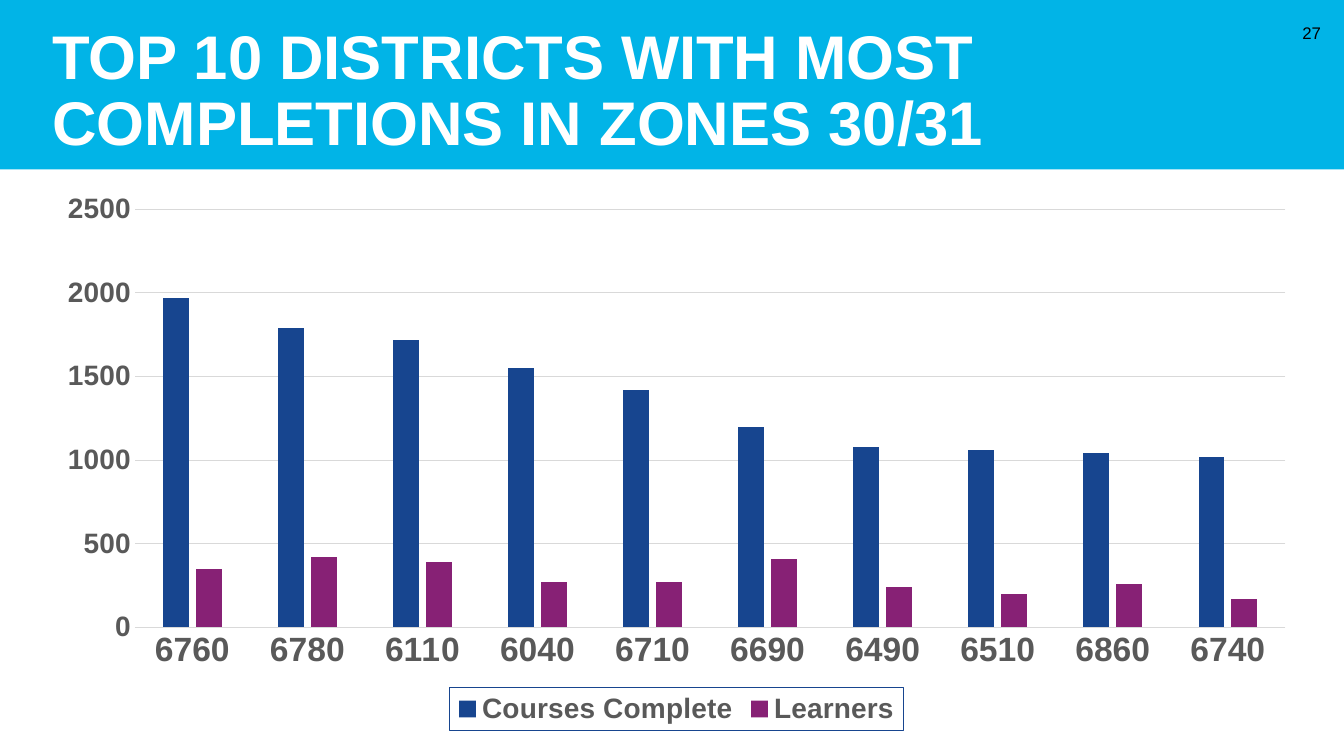
from lxml.etree import fromstring
from pptx import Presentation
from pptx.chart.data import CategoryChartData
from pptx.dml.color import RGBColor
from pptx.enum.chart import XL_CHART_TYPE as ChartType, XL_LEGEND_POSITION as LegendPos
from pptx.enum.chart import XL_TICK_MARK as Tick
from pptx.enum.shapes import MSO_SHAPE as Shape
from pptx.enum.text import MSO_ANCHOR as Anchor, PP_ALIGN as Align
from pptx.util import Inches, Pt

COLORS = {"band": "01B4E7", "white": "FFFFFF", "black": "000000", "label": "595959",
          "grid": "D9D9D9", "courses": "17458F", "learners": "872175"}
FONT = "Arial"
DISTRICTS = ["6760", "6780", "6110", "6040", "6710", "6690", "6490", "6510", "6860", "6740"]
SERIES = [
    ("Courses Complete", "courses", [1970, 1790, 1720, 1550, 1420, 1200, 1080, 1060, 1040, 1020]),
    ("Learners", "learners", [350, 420, 390, 270, 270, 410, 240, 200, 260, 170]),
]
LEGEND_BORDER = (
    '<c:spPr xmlns:c="http://schemas.openxmlformats.org/drawingml/2006/chart" '
    'xmlns:a="http://schemas.openxmlformats.org/drawingml/2006/main"><a:noFill/>'
    '<a:ln w="9525"><a:solidFill><a:srgbClr val="{}"/></a:solidFill></a:ln></c:spPr>')


def rgb(name):
    """Return the named colour."""
    return RGBColor.from_string(COLORS[name])


def set_font(font, size, color, bold=False):
    """Style a font of a run, axis or legend."""
    font.name, font.size, font.bold = FONT, Pt(size), bold
    font.color.rgb = rgb(color)


def set_line(line, color):
    """Give a line the thin chart weight and a colour."""
    line.width = Pt(0.75)
    line.color.rgb = rgb(color)


def add_band(s, width, height):
    """Draw the title band across the top."""
    sp = s.shapes.add_shape(Shape.RECTANGLE, 0, 0, width, height)
    sp.shadow.inherit = False
    sp.fill.solid()
    sp.fill.fore_color.rgb = rgb("band")
    sp.line.fill.background()


def add_text(s, box, text, size, color, bold=False, align=Align.LEFT,
             anchor=Anchor.MIDDLE, spacing=1.0, top=0.05, bottom=0.05):
    """Add a wrapped text box with one run."""
    tf = s.shapes.add_textbox(*map(Inches, box)).text_frame
    tf.word_wrap = True
    tf.vertical_anchor = anchor
    tf.margin_top, tf.margin_bottom = Inches(top), Inches(bottom)
    p = tf.paragraphs[0]
    p.alignment, p.line_spacing = align, spacing
    r = p.add_run()
    r.text = text
    set_font(r.font, size, color, bold)


def style_axis(axis, size):
    """Remove tick marks and style the axis labels."""
    axis.major_tick_mark = axis.minor_tick_mark = Tick.NONE
    set_font(axis.tick_labels.font, size, "label", True)


def style_legend(chart):
    """Place a bordered legend below the plot."""
    chart.has_legend = True
    legend = chart.legend
    legend.position = LegendPos.BOTTOM
    legend.include_in_layout = False
    set_font(legend.font, 20, "label", True)
    border = fromstring(LEGEND_BORDER.format(COLORS["courses"]))
    legend.font._element.getparent().getparent().getparent().addprevious(border)


def add_column_chart(s, box):
    """Add the clustered columns of completions and learners."""
    data = CategoryChartData()
    data.categories = DISTRICTS
    for name, _, values in SERIES:
        data.add_series(name, values)
    chart = s.shapes.add_chart(ChartType.COLUMN_CLUSTERED, *map(Inches, box), data).chart
    set_font(chart.font, 10, "black")
    chart.has_title = False
    plot = chart.plots[0]
    plot.gap_width, plot.overlap, plot.vary_by_categories = 219, -27, False
    for series, (_, color, _) in zip(plot.series, SERIES):
        series.format.fill.solid()
        series.format.fill.fore_color.rgb = rgb(color)
    style_axis(chart.category_axis, 24)
    set_line(chart.category_axis.format.line, "grid")
    value_axis = chart.value_axis
    style_axis(value_axis, 20)
    value_axis.minimum_scale, value_axis.maximum_scale, value_axis.major_unit = 0, 2500, 500
    value_axis.format.line.fill.background()
    set_line(value_axis.major_gridlines.format.line, "grid")
    style_legend(chart)


def main():
    """Build the slide and save it."""
    prs = Presentation()
    prs.slide_width, prs.slide_height = Inches(13.33), Inches(7.5)
    s = prs.slides.add_slide(prs.slide_layouts[6])
    add_band(s, prs.slide_width, Inches(1.68))
    add_text(s, (0.42, 0, 12.58, 1.68), "TOP 10 DISTRICTS WITH MOST COMPLETIONS IN ZONES 30/31",
             44, "white", bold=True, anchor=Anchor.BOTTOM, spacing=0.9, top=0, bottom=0.1)
    add_text(s, (12.74, 0.13, 0.46, 0.4), "27", 12, "black", align=Align.RIGHT)
    add_column_chart(s, (0.42, 1.81, 12.58, 5.44))
    prs.save("out.pptx")


if __name__ == "__main__":
    main()
